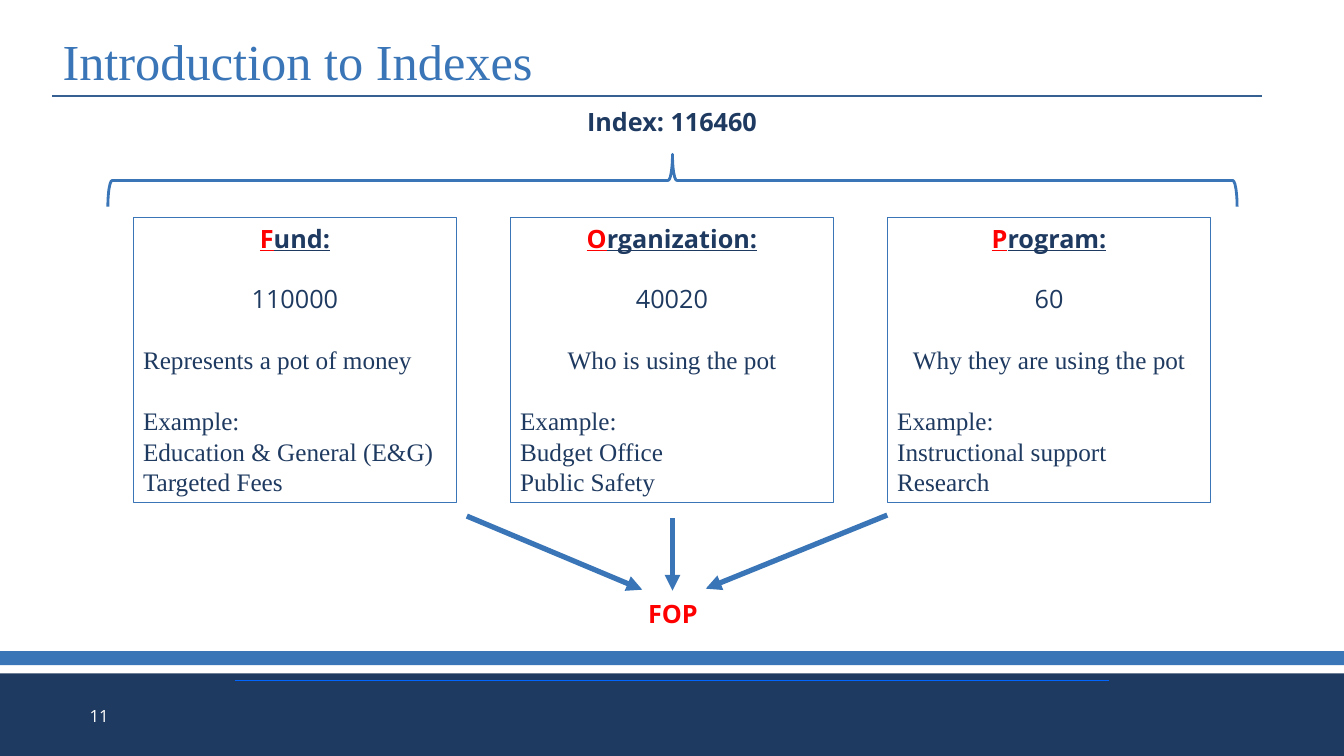
from dataclasses import dataclass

from lxml import etree
from pptx import Presentation
from pptx.dml.color import RGBColor
from pptx.enum import shapes, text
from pptx.oxml import ns
from pptx.util import Inches, Pt

NAVY = RGBColor(0x1F, 0x3A, 0x60)
BLUE = RGBColor(0x39, 0x75, 0xB7)
RULE_BLUE = RGBColor(0x37, 0x60, 0x92)
FOOTER_BLUE = RGBColor(0x00, 0x66, 0xFF)
RED = RGBColor(0xFF, 0x00, 0x00)
WHITE = RGBColor(0xFF, 0xFF, 0xFF)
SANS = "Open Sans"
SERIF = "Times New Roman"
LINE_PITCH = Pt(21.75)
LEFT, CENTER = text.PP_ALIGN.LEFT, text.PP_ALIGN.CENTER


@dataclass
class Component:
    name: str
    code: str
    meaning: str
    examples: tuple[str, str]
    meaning_align: text.PP_ALIGN = CENTER


@dataclass
class Line:
    start: tuple[float, float]
    end: tuple[float, float]
    color: RGBColor = BLUE
    width: float = 3.75
    arrow: bool = True


COMPONENTS = [
    Component("Fund:", "110000", "Represents a pot of money",
              ("Education & General (E&G)", "Targeted Fees"), LEFT),
    Component("Organization:", "40020", "Who is using the pot",
              ("Budget Office", "Public Safety")),
    Component("Program:", "60", "Why they are using the pot",
              ("Instructional support", "Research")),
]
BOX_LEFT, BOX_TOP, BOX_WIDTH, BOX_HEIGHT, BOX_STEP = 1.32, 2.16, 3.21, 2.83, 3.74

FOOTER_LINE = Line((2.33, 6.75), (11, 6.75), FOOTER_BLUE, 0.25, False)
TITLE_RULE = Line((0.52, 0.95), (12.52, 0.95), RULE_BLUE, 1.5, False)
ARROWS = [
    Line((4.63, 5.12), (6.37, 5.85)),
    Line((6.67, 5.14), (6.67, 5.86)),
    Line((8.8, 5.11), (7, 5.84)),
]


def add_run(paragraph, words: str, color: RGBColor, font: str = SANS, size: float = 18,
            bold: bool = False, underline: bool = False) -> None:
    run = paragraph.add_run()
    run.text = words
    run.font.name, run.font.size = font, Pt(size)
    run.font.bold, run.font.underline = bold, underline
    run.font.color.rgb = color


def add_plain_shape(slide, kind, left: float, top: float, width: float, height: float):
    """Add a preset shape without shadow, fill or outline."""
    shape = slide.shapes.add_shape(
        kind, Inches(left), Inches(top), Inches(width), Inches(height))
    shape.shadow.inherit = False
    shape.fill.background()
    shape.line.fill.background()
    return shape


def add_bar(slide, top: float, height: float, color: RGBColor) -> None:
    bar = add_plain_shape(slide, shapes.MSO_SHAPE.RECTANGLE, 0, top, 13.33, height)
    bar.fill.solid()
    bar.fill.fore_color.rgb = color


def add_line(slide, line: Line) -> None:
    connector = slide.shapes.add_connector(
        shapes.MSO_CONNECTOR.STRAIGHT, *map(Inches, line.start + line.end))
    connector.line.color.rgb = line.color
    connector.line.width = Pt(line.width)
    if line.arrow:
        etree.SubElement(connector.line._get_or_add_ln(), ns.qn("a:tailEnd"), type="triangle")
    etree.SubElement(connector._element.spPr, ns.qn("a:effectLst"))


def add_label(slide, words: str, left: float, top: float, width: float,
              color: RGBColor, size: float = 18, bold: bool = True, align=CENTER) -> None:
    label = slide.shapes.add_textbox(Inches(left), Inches(top), Inches(width), Inches(0.4))
    frame = label.text_frame
    frame.word_wrap = True
    frame.vertical_anchor = text.MSO_ANCHOR.MIDDLE
    frame.paragraphs[0].alignment = align
    add_run(frame.paragraphs[0], words, color, size=size, bold=bold)


def add_title(slide, words: str) -> None:
    title = slide.shapes.title
    title.left, title.top = Inches(0.52), Inches(0.33)
    title.width, title.height = Inches(11.75), Inches(0.62)
    frame = title.text_frame
    frame.auto_size = text.MSO_AUTO_SIZE.NONE
    frame.vertical_anchor = text.MSO_ANCHOR.MIDDLE
    paragraph = frame.paragraphs[0]
    paragraph.alignment = LEFT
    paragraph.line_spacing = 0.9
    add_run(paragraph, words, BLUE, SERIF, 36)


def add_component(slide, component: Component, left: float) -> None:
    box = add_plain_shape(slide, shapes.MSO_SHAPE.RECTANGLE,
                          left, BOX_TOP, BOX_WIDTH, BOX_HEIGHT)
    box.line.color.rgb = BLUE
    box.line.width = Pt(0.75)
    frame = box.text_frame
    frame.word_wrap = True
    frame.vertical_anchor = text.MSO_ANCHOR.TOP

    heading = frame.paragraphs[0]
    heading.alignment = CENTER
    heading.line_spacing = LINE_PITCH
    add_run(heading, component.name[0], RED, bold=True, underline=True)
    add_run(heading, component.name[1:], NAVY, bold=True, underline=True)

    first_example, second_example = component.examples
    for words, font, align, gap_before in (
        (component.code, SANS, CENTER, True),
        (component.meaning, SERIF, component.meaning_align, True),
        ("Example:", SERIF, LEFT, True),
        (first_example, SERIF, LEFT, False),
        (second_example, SERIF, LEFT, False),
    ):
        paragraph = frame.add_paragraph()
        paragraph.alignment = align
        paragraph.line_spacing = LINE_PITCH
        paragraph.space_before = LINE_PITCH if gap_before else Pt(0)
        add_run(paragraph, words, NAVY, font)


def add_brace(slide) -> None:
    brace = add_plain_shape(slide, shapes.MSO_SHAPE.RIGHT_BRACE, 6.41, -3.81, 0.52, 11.2)
    brace.rotation = 270
    brace.adjustments[0], brace.adjustments[1] = 0.083, 0.5
    brace.line.color.rgb = BLUE
    brace.line.width = Pt(2)


def main() -> None:
    deck = Presentation()
    deck.slide_width, deck.slide_height = Inches(13.33), Inches(7.5)
    slide = deck.slides.add_slide(deck.slide_layouts.get_by_name("Title Only"))

    add_bar(slide, 6.68, 0.82, NAVY)
    add_bar(slide, 6.46, 0.14, BLUE)
    add_label(slide, "11", 0.79, 6.9, 0.57, WHITE, size=12, bold=False, align=LEFT)
    add_line(slide, FOOTER_LINE)
    add_title(slide, "Introduction to Indexes")
    add_line(slide, TITLE_RULE)
    add_label(slide, "Index: 116460", 4.91, 1, 3.51, NAVY)
    for column, component in enumerate(COMPONENTS):
        add_component(slide, component, BOX_LEFT + column * BOX_STEP)
    add_label(slide, "FOP", 6.26, 5.89, 0.83, RED)
    add_brace(slide)
    for arrow in ARROWS:
        add_line(slide, arrow)

    deck.save("out.pptx")


if __name__ == "__main__":
    main()
